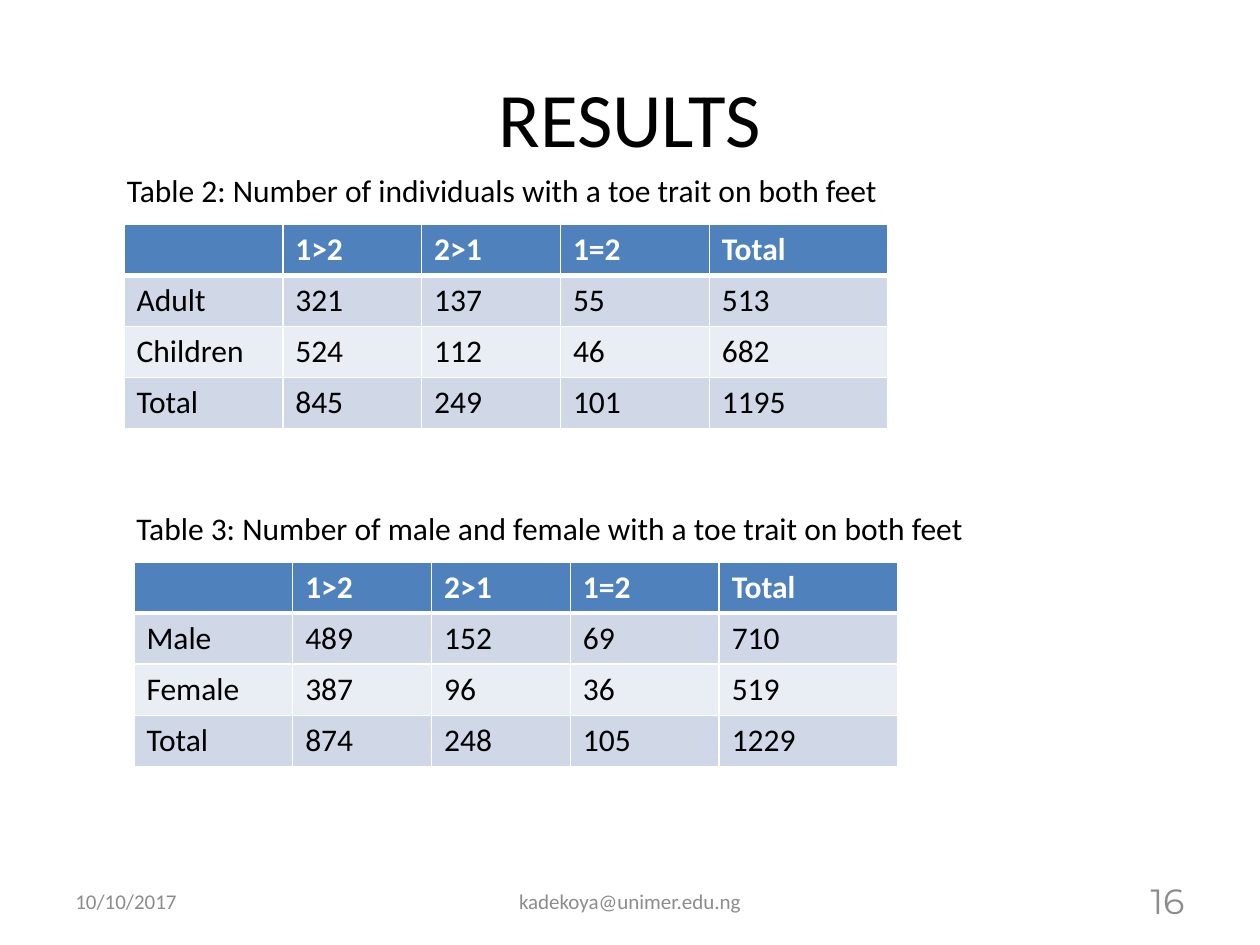
from dataclasses import dataclass

from lxml import etree
from pptx import Presentation
from pptx.dml.color import RGBColor
from pptx.enum.text import MSO_ANCHOR, PP_ALIGN
from pptx.oxml.ns import qn
from pptx.util import Cm, Pt

LEFT, CENTER, RIGHT = PP_ALIGN.LEFT, PP_ALIGN.CENTER, PP_ALIGN.RIGHT
TOP, MIDDLE = MSO_ANCHOR.TOP, MSO_ANCHOR.MIDDLE

COLORS = {
    "text": "000000",
    "muted": "8C8C8C",
    "white": "FFFFFF",
    "header": "4F81BD",
    "odd_row": "D0D8E8",
    "even_row": "E9EDF4",
}
COLUMN_WIDTHS = (3.2, 2.8, 2.8, 3.0, 3.6)
ROW_HEIGHT = 1.03
HEADINGS = ("", "1>2", "2>1", "1=2", "Total")
THIN, THICK = 1, 3


@dataclass
class Label:
    text: str
    left: float
    top: float
    width: float
    height: float
    size: int
    color: str = "text"
    align: PP_ALIGN = LEFT
    anchor: MSO_ANCHOR = MIDDLE
    font: str = "Calibri"


@dataclass
class ResultTable:
    caption: Label
    left: float
    top: float
    rows: tuple


LABELS = (
    Label("RESULTS", 1.27, 0.76, 22.86, 3.18, 44, align=CENTER),
    Label("10/10/2017", 1.27, 17.65, 5.92, 1.02, 12, "muted"),
    Label("kadekoya@unimer.edu.ng", 8.68, 17.65, 8.04, 1.02, 12, "muted", CENTER),
    Label("16", 18.21, 17.65, 5.92, 1.02, 20, "muted", RIGHT, font="Montserrat"),
)
TABLES = (
    ResultTable(
        Label("Table 2: Number of individuals with a toe trait on both feet",
              2.31, 3.33, 15.82, 1.02, 18, anchor=TOP),
        2.5, 4.52,
        (("Adult", 321, 137, 55, 513),
         ("Children", 524, 112, 46, 682),
         ("Total", 845, 249, 101, 1195)),
    ),
    ResultTable(
        Label("Table 3: Number of male and female with a toe trait on both feet",
              2.5, 10.13, 17.4, 1.02, 18, anchor=TOP),
        2.7, 11.33,
        (("Male", 489, 152, 69, 710),
         ("Female", 387, 96, 36, 519),
         ("Total", 874, 248, 105, 1229)),
    ),
)


def rgb(name: str) -> RGBColor:
    return RGBColor.from_string(COLORS[name])


def add_span(para, text: str, size: int, color: str, font: str = "Calibri",
             bold: bool = False) -> None:
    span = para.add_run()
    span.text = text
    span.font.size = Pt(size)
    span.font.name = font
    span.font.bold = bold
    span.font.color.rgb = rgb(color)


def add_label(page, label: Label) -> None:
    box = page.shapes.add_textbox(
        Cm(label.left), Cm(label.top), Cm(label.width), Cm(label.height))
    frame = box.text_frame
    frame.word_wrap = True
    frame.vertical_anchor = label.anchor
    para = frame.paragraphs[0]
    para.alignment = label.align
    add_span(para, label.text, label.size, label.color, label.font)


def set_borders(cell, top: int, bottom: int) -> None:
    """Draw white cell borders, with the top and bottom widths in points."""
    properties = cell._tc.get_or_add_tcPr()
    for tag, width in (("a:lnL", THIN), ("a:lnR", THIN), ("a:lnT", top), ("a:lnB", bottom)):
        line = etree.SubElement(properties, qn(tag), w=str(Pt(width)))
        fill = etree.SubElement(line, qn("a:solidFill"))
        etree.SubElement(fill, qn("a:srgbClr"), val=COLORS["white"])


def add_result_table(page, result: ResultTable) -> None:
    add_label(page, result.caption)
    rows = (HEADINGS, *result.rows)
    table = page.shapes.add_table(
        len(rows), len(HEADINGS), Cm(result.left), Cm(result.top),
        Cm(sum(COLUMN_WIDTHS)), Cm(ROW_HEIGHT * len(rows))).table
    for column, width in zip(table.columns, COLUMN_WIDTHS):
        column.width = Cm(width)
    for row_index, values in enumerate(rows):
        table.rows[row_index].height = Cm(ROW_HEIGHT)
        is_header = row_index == 0
        row_fill = "header" if is_header else "odd_row" if row_index % 2 else "even_row"
        for column_index, value in enumerate(values):
            cell = table.cell(row_index, column_index)
            set_borders(cell, THICK if row_index == 1 else THIN, THICK if is_header else THIN)
            cell.fill.solid()
            cell.fill.fore_color.rgb = rgb(row_fill)
            if value != "":
                add_span(cell.text_frame.paragraphs[0], str(value), 18,
                         "white" if is_header else "text", bold=is_header)


def main() -> None:
    deck = Presentation()
    deck.slide_width, deck.slide_height = Cm(25.4), Cm(19.05)
    page = deck.slides.add_slide(deck.slide_layouts[6])
    for label in LABELS:
        add_label(page, label)
    for result in TABLES:
        add_result_table(page, result)
    deck.save("out.pptx")


if __name__ == "__main__":
    main()
